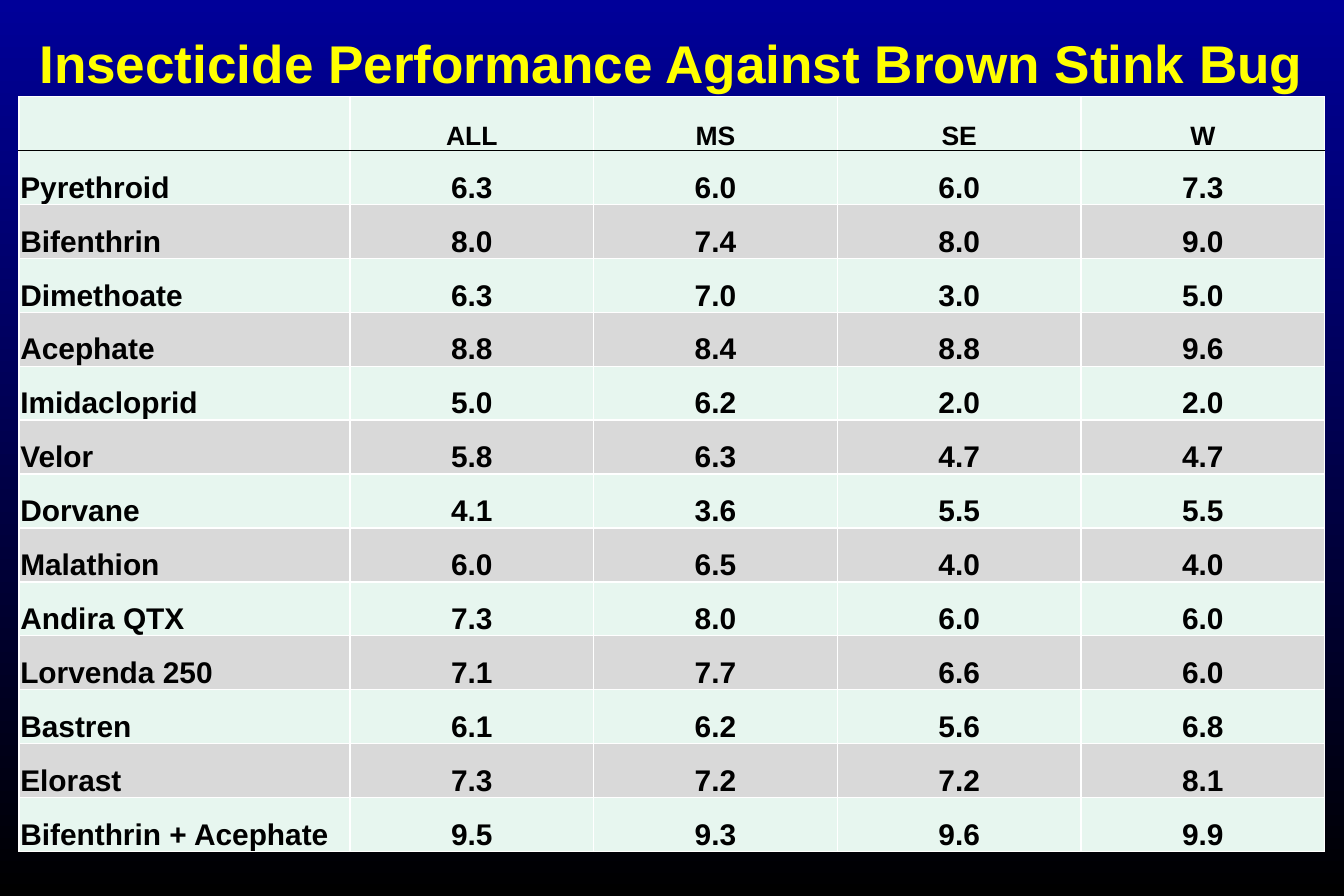
from lxml.etree import SubElement
from pptx import Presentation
from pptx.dml.color import RGBColor
from pptx.enum.text import MSO_ANCHOR as Anchor, MSO_AUTO_SIZE as AutoSize, PP_ALIGN as Align
from pptx.oxml.ns import qn
from pptx.util import Inches, Pt

COLOURS = {
    "sky": "000099",
    "black": "000000",
    "title": "FFFF00",
    "mint": "E7F6EF",
    "grey": "D9D9D9",
    "white": "FFFFFF",
}
REGIONS = ["", "ALL", "MS", "SE", "W"]
SCORES = [
    ("Pyrethroid", 6.3, 6.0, 6.0, 7.3),
    ("Bifenthrin", 8.0, 7.4, 8.0, 9.0),
    ("Dimethoate", 6.3, 7.0, 3.0, 5.0),
    ("Acephate", 8.8, 8.4, 8.8, 9.6),
    ("Imidacloprid", 5.0, 6.2, 2.0, 2.0),
    ("Velor", 5.8, 6.3, 4.7, 4.7),
    ("Dorvane", 4.1, 3.6, 5.5, 5.5),
    ("Malathion", 6.0, 6.5, 4.0, 4.0),
    ("Andira QTX", 7.3, 8.0, 6.0, 6.0),
    ("Lorvenda 250", 7.1, 7.7, 6.6, 6.0),
    ("Bastren", 6.1, 6.2, 5.6, 6.8),
    ("Elorast", 7.3, 7.2, 7.2, 8.1),
    ("Bifenthrin + Acephate", 9.5, 9.3, 9.6, 9.9),
]


class PageBuilder:
    def __init__(self, page, font):
        self.page = page
        self.font = font

    def colour(self, name):
        return RGBColor.from_string(COLOURS[name])

    def background(self, top, bottom):
        fill = self.page.background.fill
        fill.gradient()
        fill.gradient_angle = 270
        for stop, name in zip(fill.gradient_stops, (top, bottom)):
            stop.color.rgb = self.colour(name)

    def add_text(self, frame, text, size, colour, align):
        para = frame.paragraphs[0]
        para.alignment = align
        span = para.add_run()
        span.text = text
        span.font.name = self.font
        span.font.size = Pt(size)
        span.font.bold = True
        span.font.color.rgb = self.colour(colour)

    def title(self, text, left, top, width, height):
        box = self.page.shapes.title
        box.left, box.top = Inches(left), Inches(top)
        box.width, box.height = Inches(width), Inches(height)
        frame = box.text_frame
        frame.word_wrap = True
        frame.auto_size = AutoSize.SHAPE_TO_FIT_TEXT
        frame.vertical_anchor = Anchor.BOTTOM
        self.add_text(frame, text, 32, "title", Align.CENTER)

    def borders(self, cell, top, bottom):
        properties = cell._tc.get_or_add_tcPr()
        sides = {"lnL": "white", "lnR": "white", "lnT": top, "lnB": bottom}
        for index, (side, name) in enumerate(sides.items()):
            line = SubElement(properties, qn(f"a:{side}"), w=str(Pt(1)))
            fill = SubElement(line, qn("a:solidFill"))
            SubElement(fill, qn("a:srgbClr"), val=COLOURS[name])
            properties.insert(index, line)

    def cell(self, cell, text, size, fill, align):
        cell.fill.solid()
        cell.fill.fore_color.rgb = self.colour(fill)
        cell.vertical_anchor = Anchor.BOTTOM
        cell.margin_left = cell.margin_right = cell.margin_top = Inches(0.01)
        cell.margin_bottom = Inches(0)
        if text:
            self.add_text(cell.text_frame, text, size, "black", align)

    def table(self, rows, left, top, widths, height):
        frame = self.page.shapes.add_table(
            len(rows), len(widths), Inches(left), Inches(top),
            Inches(sum(widths)), Inches(height))
        table = frame.table
        table.first_row = table.horz_banding = False
        for column, width in zip(table.columns, widths):
            column.width = Inches(width)
        for r, values in enumerate(rows):
            table.rows[r].height = Inches(height / len(rows))
            fill = "grey" if r and r % 2 == 0 else "mint"
            for c, value in enumerate(values):
                cell = table.cell(r, c)
                align = Align.CENTER if c else Align.LEFT
                self.cell(cell, str(value), 18 if r else 16, fill, align)
                self.borders(cell, "black" if r == 1 else "white",
                             "white" if r else "black")


def main():
    deck = Presentation()
    deck.slide_width, deck.slide_height = Inches(11.25), Inches(7.5)
    page = deck.slides.add_slide(deck.slide_layouts[5])
    builder = PageBuilder(page, "Arial")
    builder.background("sky", "black")
    builder.title("Insecticide Performance Against Brown Stink Bug",
                  0, 0.2, 11.25, 0.64)
    builder.table([REGIONS, *SCORES], 0.16, 0.81, [2.77] + [2.04] * 4, 6.32)
    deck.save("out.pptx")


if __name__ == "__main__":
    main()
